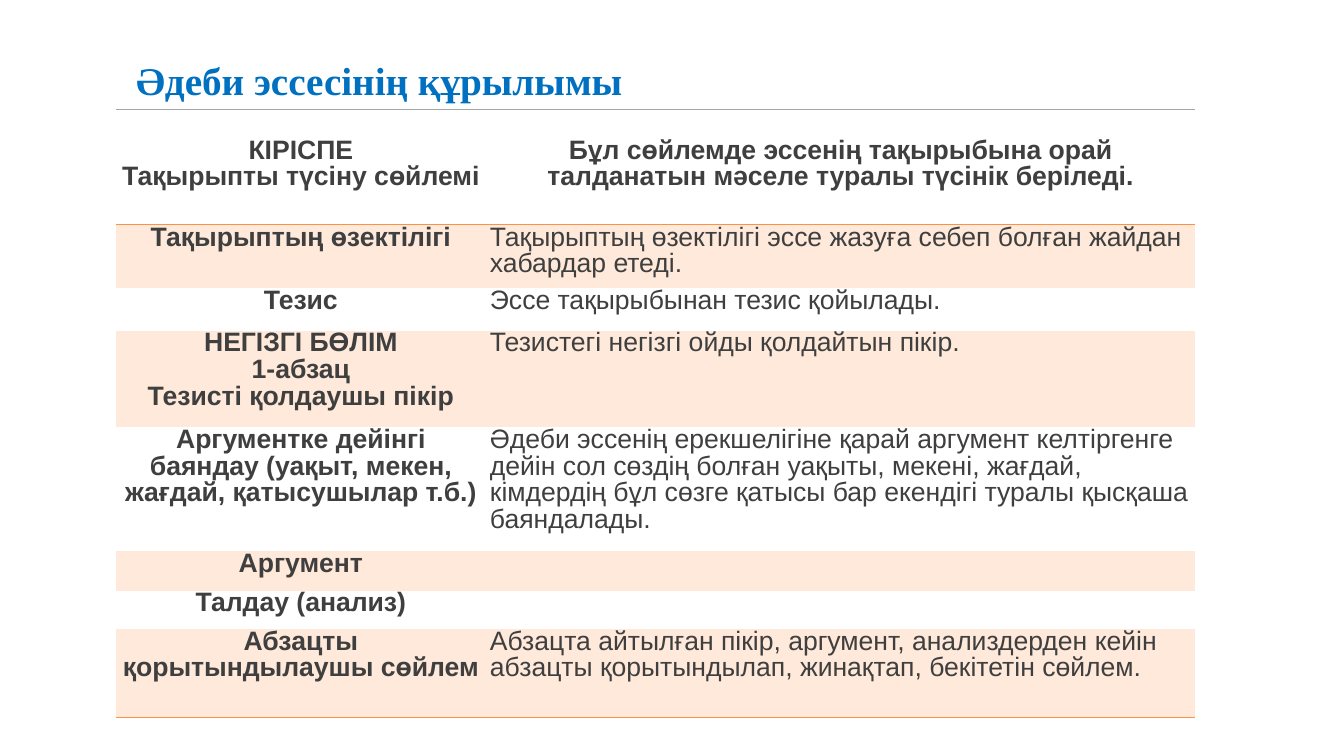
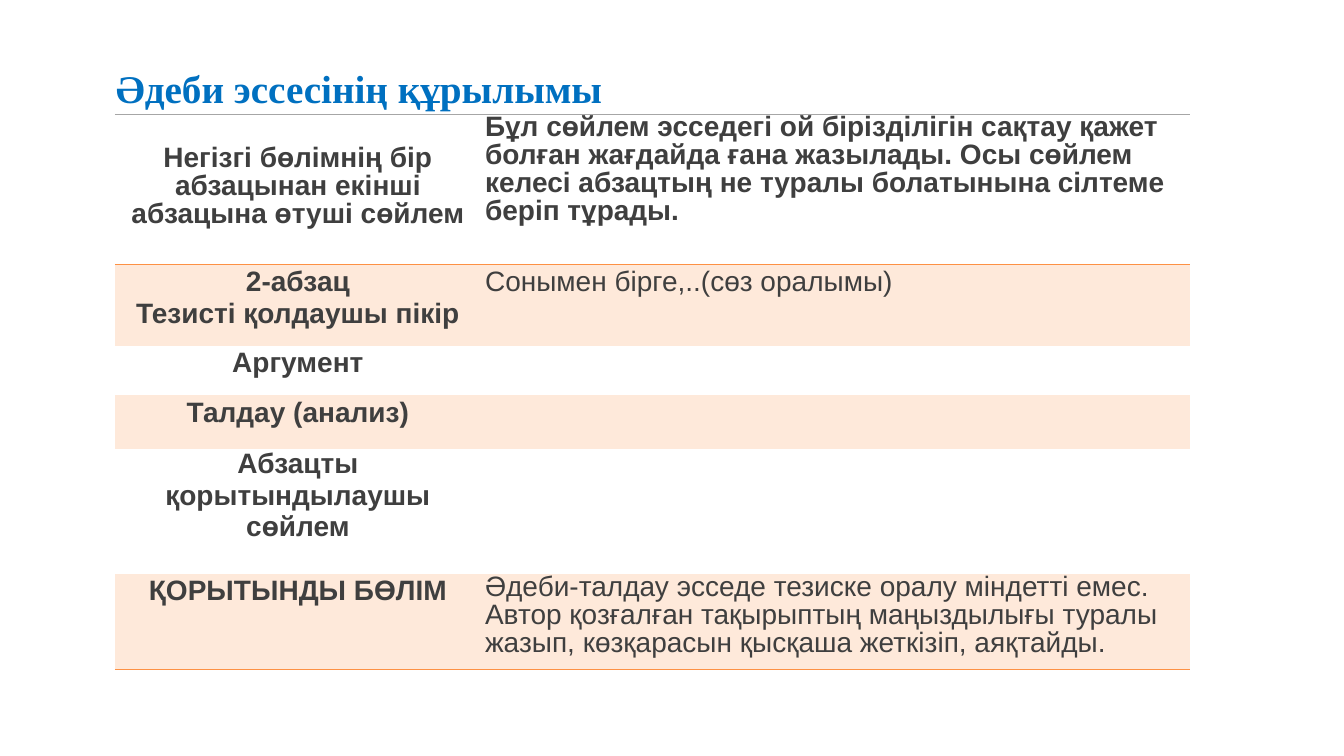
from dataclasses import dataclass

from pptx import Presentation
from pptx.dml.color import RGBColor
from pptx.enum.text import MSO_ANCHOR, MSO_AUTO_SIZE, PP_ALIGN
from pptx.oxml.ns import qn
from pptx.util import Pt
from lxml.etree import SubElement

# Shared style
TITLE_BLUE = RGBColor(0x00, 0x70, 0xC0)
TEXT_GREY = RGBColor(0x3F, 0x3F, 0x3F)
RULE_GREY = RGBColor(0xA6, 0xA6, 0xA6)
RULE_ORANGE = RGBColor(0xFD, 0x91, 0x44)
BAND = RGBColor(0xFE, 0xE9, 0xDA)
TITLE_FONT, BODY_FONT = "Times New Roman", "Arial"
NO_STYLE = "{2D5ABB26-0587-4C30-8999-92F81FD0307C}"
TITLE = "Әдеби эссесінің құрылымы"


@dataclass
class Row:
    height: float
    left: str
    right: str = ""
    left_spacing: float = 0.9
    right_spacing: float = 0.9


@dataclass
class Essay:
    """One slide: title position, table geometry and rows."""
    title_at: tuple
    table_at: tuple
    columns: tuple
    size: int
    header_tops: tuple
    header_right: PP_ALIGN
    rows: list


ESSAYS = [
    Essay((90, 35.3), (82.8, 78.5), (264.2, 506.9), 19, (20, 20), PP_ALIGN.CENTER, [
        Row(82.1, "КІРІСПЕ\nТақырыпты түсіну сөйлемі",
            "Бұл сөйлемде эссенің тақырыбына орай талданатын мәселе туралы түсінік беріледі."),
        Row(45.4, "Тақырыптың өзектілігі",
            "Тақырыптың өзектілігі эссе жазуға себеп болған жайдан хабардар етеді."),
        Row(30.2, "Тезис", "Эссе тақырыбынан тезис қойылады."),
        Row(69.1, "НЕГІЗГІ БӨЛІМ\n1-абзац\nТезисті қолдаушы пікір",
            "Тезистегі негізгі ойды қолдайтын пікір."),
        Row(88.6, "Аргументке дейінгі баяндау (уақыт, мекен, жағдай, қатысушылар т.б.)",
            "Әдеби эссенің ерекшелігіне қарай аргумент келтіргенге дейін сол сөздің болған "
            "уақыты, мекені, жағдай, кімдердің бұл сөзге қатысы бар екендігі туралы қысқаша "
            "баяндалады."),
        Row(28.1, "Аргумент"),
        Row(27.4, "Талдау (анализ)"),
        Row(63.4, "Абзацты қорытындылаушы сөйлем",
            "Абзацта айтылған пікір, аргумент, анализдерден кейін абзацты қорытындылап, "
            "жинақтап, бекітетін сөйлем."),
    ]),
    Essay((75.6, 40.3), (82.1, 81.4), (261.4, 506.9), 20, (22, 0), PP_ALIGN.LEFT, [
        Row(107.3, "Негізгі бөлімнің бір абзацынан екінші абзацына өтуші сөйлем",
            "Бұл сөйлем эсседегі ой бірізділігін сақтау қажет болған жағдайда ғана жазылады. "
            "Осы сөйлем келесі абзацтың не туралы болатынына сілтеме беріп тұрады."),
        Row(58.3, "2-абзац\nТезисті қолдаушы пікір", "Сонымен бірге,..(сөз оралымы)",
            1.05, 1.05),
        Row(35.3, "Аргумент", left_spacing=1.05),
        Row(38.2, "Талдау (анализ)", left_spacing=1.05),
        Row(89.3, "Абзацты қорытындылаушы сөйлем", left_spacing=1.0),
        Row(68.4, "ҚОРЫТЫНДЫ БӨЛІМ",
            "Әдеби-талдау эсседе тезиске оралу міндетті емес. Автор қозғалған тақырыптың "
            "маңыздылығы туралы жазып, көзқарасын қысқаша жеткізіп, аяқтайды.", 1.05),
    ]),
]


def format_text(tf, font, size, color, bold, align, spacing):
    for p in tf.paragraphs:
        p.alignment = align
        p.line_spacing = spacing
        for r in p.runs:
            r.font.name = font
            r.font.size = Pt(size)
            r.font.bold = bold
            r.font.color.rgb = color


def add_title(s, at):
    sp = s.shapes.title
    sp.left, sp.top, sp.width, sp.height = Pt(at[0]), Pt(at[1]), Pt(525), Pt(43.2)
    tf = sp.text_frame
    tf.text = TITLE
    tf.auto_size = MSO_AUTO_SIZE.NONE
    tf.vertical_anchor = MSO_ANCHOR.TOP
    format_text(tf, TITLE_FONT, 28, TITLE_BLUE, True, PP_ALIGN.LEFT, 1.05)


def add_border(cell, tag, color, width):
    """Call before filling the cell: borders precede the fill."""
    ln = SubElement(cell._tc.get_or_add_tcPr(), qn(tag), w=str(Pt(width)))
    fill = SubElement(ln, qn("a:solidFill"))
    SubElement(fill, qn("a:srgbClr"), val=str(color))


def fill_cell(cell, text, size, bold, align, spacing, top):
    cell.margin_left = cell.margin_right = Pt(3)
    cell.margin_top, cell.margin_bottom = Pt(top), Pt(0)
    cell.vertical_anchor = MSO_ANCHOR.TOP
    cell.text_frame.text = text
    format_text(cell.text_frame, BODY_FONT, size, TEXT_GREY, bold, align, spacing)


def add_essay_table(s, essay):
    rows, columns = essay.rows, essay.columns
    left, top = essay.table_at
    frame = s.shapes.add_table(len(rows), len(columns), Pt(left), Pt(top),
                               Pt(sum(columns)), Pt(sum(row.height for row in rows)))
    frame.element.find(".//" + qn("a:tableStyleId")).text = NO_STYLE
    table = frame.table
    table.first_row = table.horz_banding = False
    for column, width in zip(table.columns, columns):
        column.width = Pt(width)

    for i, row in enumerate(rows):
        table.rows[i].height = Pt(row.height)
        header = i == 0
        tops = essay.header_tops if header else (0, 0)
        right_align = essay.header_right if header else PP_ALIGN.LEFT
        label, detail = table.cell(i, 0), table.cell(i, 1)
        fill_cell(label, row.left, essay.size, True, PP_ALIGN.CENTER,
                  row.left_spacing, tops[0])
        fill_cell(detail, row.right, essay.size, header, right_align,
                  row.right_spacing, tops[1])
        # Rules above and below the header and under the last row; odd rows banded
        for cell in (label, detail):
            if header:
                add_border(cell, "a:lnT", RULE_GREY, 0.75)
            if header or i == len(rows) - 1:
                add_border(cell, "a:lnB", RULE_ORANGE, 1)
            if i % 2:
                cell.fill.solid()
                cell.fill.fore_color.rgb = BAND
            else:
                cell.fill.background()


def main():
    prs = Presentation()
    prs.slide_width, prs.slide_height = Pt(960), Pt(540)
    for essay in ESSAYS:
        s = prs.slides.add_slide(prs.slide_layouts[5])
        add_title(s, essay.title_at)
        add_essay_table(s, essay)
    prs.save("out.pptx")


if __name__ == "__main__":
    main()
